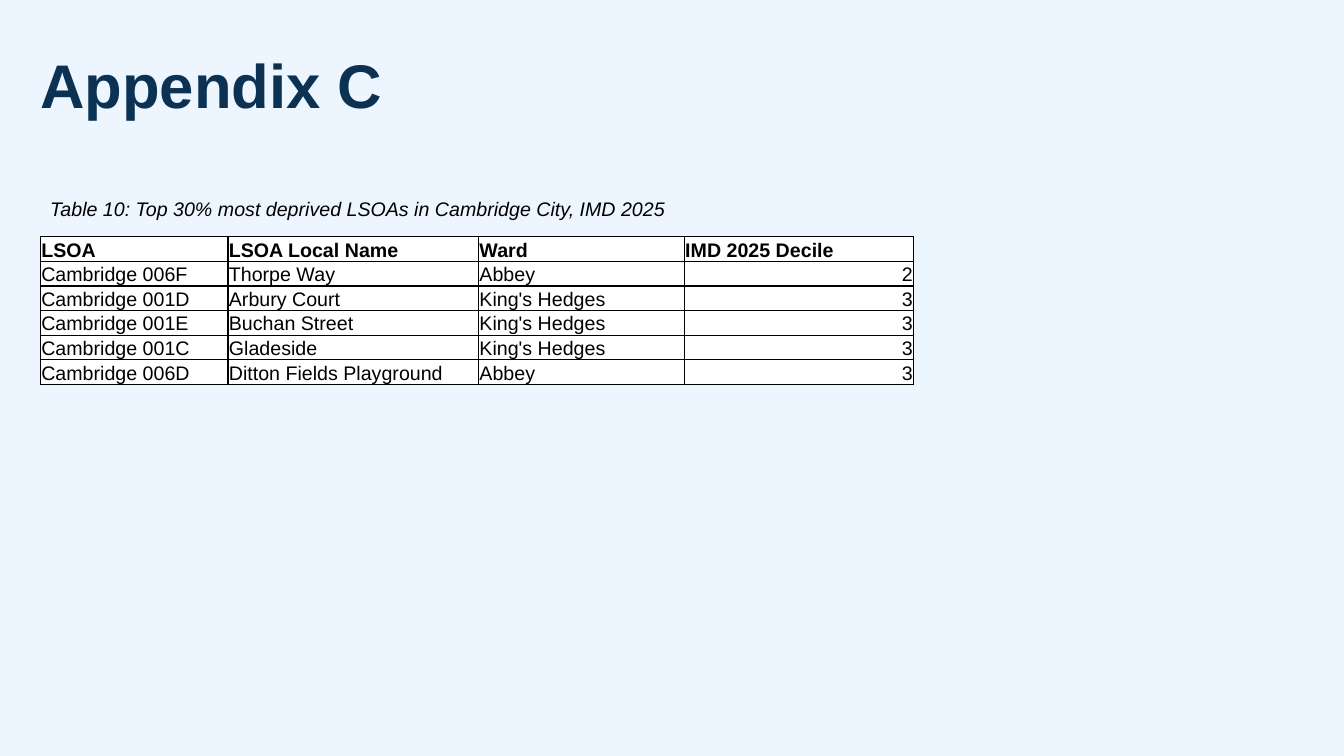
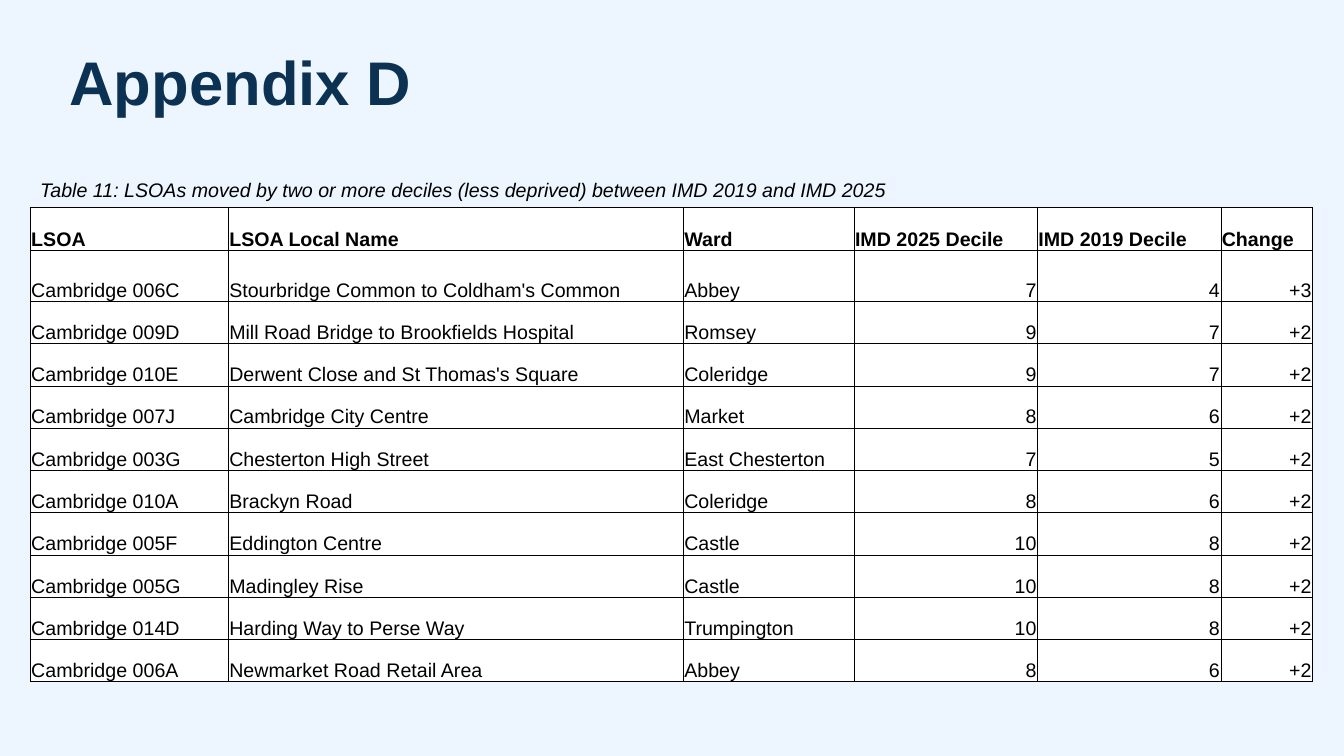
"""Build two appendix slides with tables of deprivation deciles."""
from lxml import etree
from pptx import Presentation
from pptx.dml.color import RGBColor
from pptx.enum import text
from pptx.oxml import ns
from pptx.util import Pt

PALE, NAVY, BLACK, WHITE = "EDF6FF", "0B3153", "000000", "FFFFFF"
FONT = "Arial"


def paint(target, color):
    if hasattr(target, "solid"):
        target.solid()
        target = target.fore_color
    target.rgb = RGBColor.from_string(color)


def write(tf, words, size=14, color=BLACK, bold=False, italic=False,
          align=text.PP_ALIGN.LEFT, spacing=None):
    tf.word_wrap = True
    p = tf.paragraphs[0]
    p.alignment = align
    p.line_spacing = spacing
    r = p.add_run()
    r.text = words
    r.font.name = FONT
    r.font.size = Pt(size)
    r.font.bold = bold
    r.font.italic = italic
    paint(r.font.color, color)


appendices = [
    {
        "title": "Appendix C",
        "title_box": (28.8, 39.6, 251, 62),
        "caption": "Table 10: Top 30% most deprived LSOAs in Cambridge City, IMD 2025",
        "caption_box": (28.8, 136.8, 538.5, 24.5),
        "table_at": (28.8, 169.2),
        "border": 1,
        "widths": [134, 179, 147, 164],
        "heights": [17.3] * 6,
        "rows": [
            ("LSOA", "LSOA Local Name", "Ward", "IMD 2025 Decile"),
            ("Cambridge 006F", "Thorpe Way", "Abbey", "2"),
            ("Cambridge 001D", "Arbury Court", "King's Hedges", "3"),
            ("Cambridge 001E", "Buchan Street", "King's Hedges", "3"),
            ("Cambridge 001C", "Gladeside", "King's Hedges", "3"),
            ("Cambridge 006D", "Ditton Fields Playground", "Abbey", "3"),
        ],
    },
    {
        "title": "Appendix D",
        "title_box": (49.7, 37.4, 828, 63.4),
        "caption": "Table 11: LSOAs moved by two or more deciles (less deprived) "
                   "between IMD 2019 and IMD 2025",
        "caption_box": (21.6, 123.8, 687.6, 24.5),
        "table_at": (21.6, 148.3),
        "border": 0.5,
        "widths": [141.5, 325, 122, 131, 131, 65.5],
        "heights": [30.5, 36.5] + [30.2] * 9,
        "rows": [
            ("LSOA", "LSOA Local Name", "Ward", "IMD 2025 Decile", "IMD 2019 Decile", "Change"),
            ("Cambridge 006C", "Stourbridge Common to Coldham's Common", "Abbey", "7", "4", "+3"),
            ("Cambridge 009D", "Mill Road Bridge to Brookfields Hospital", "Romsey", "9", "7", "+2"),
            ("Cambridge 010E", "Derwent Close and St Thomas's Square", "Coleridge", "9", "7", "+2"),
            ("Cambridge 007J", "Cambridge City Centre", "Market", "8", "6", "+2"),
            ("Cambridge 003G", "Chesterton High Street", "East Chesterton", "7", "5", "+2"),
            ("Cambridge 010A", "Brackyn Road", "Coleridge", "8", "6", "+2"),
            ("Cambridge 005F", "Eddington Centre", "Castle", "10", "8", "+2"),
            ("Cambridge 005G", "Madingley Rise", "Castle", "10", "8", "+2"),
            ("Cambridge 014D", "Harding Way to Perse Way", "Trumpington", "10", "8", "+2"),
            ("Cambridge 006A", "Newmarket Road Retail Area", "Abbey", "8", "6", "+2"),
        ],
    },
]

prs = Presentation()
prs.slide_width, prs.slide_height = Pt(960), Pt(540)
paint(prs.slide_master.background.fill, PALE)

for appendix in appendices:
    s = prs.slides.add_slide(prs.slide_layouts[6])

    tf = s.shapes.add_textbox(*map(Pt, appendix["title_box"])).text_frame
    tf.margin_left = tf.margin_right = tf.margin_top = tf.margin_bottom = 0
    write(tf, appendix["title"], size=44, color=NAVY, bold=True, spacing=0.9)

    tf = s.shapes.add_textbox(*map(Pt, appendix["caption_box"])).text_frame
    tf.auto_size = text.MSO_AUTO_SIZE.SHAPE_TO_FIT_TEXT
    write(tf, appendix["caption"], italic=True)

    rows, widths, heights = appendix["rows"], appendix["widths"], appendix["heights"]
    left, top = appendix["table_at"]
    table = s.shapes.add_table(len(rows), len(widths), Pt(left), Pt(top),
                               Pt(sum(widths)), Pt(sum(heights))).table
    table.first_row = table.horz_banding = False
    for column, width in zip(table.columns, widths):
        column.width = Pt(width)
    for i, (row, height) in enumerate(zip(rows, heights)):
        table.rows[i].height = Pt(height)
        for j, words in enumerate(row):
            cell = table.cell(i, j)
            cell.margin_left = cell.margin_right = cell.margin_top = Pt(0.72)
            cell.margin_bottom = 0
            cell.vertical_anchor = text.MSO_ANCHOR.BOTTOM
            is_number = i > 0 and j > 2
            write(cell.text_frame, words, bold=i == 0,
                  align=text.PP_ALIGN.RIGHT if is_number else text.PP_ALIGN.LEFT)
            tc_pr = cell._tc.get_or_add_tcPr()
            for side in ("a:lnL", "a:lnR", "a:lnT", "a:lnB"):
                ln = etree.SubElement(tc_pr, ns.qn(side), w=str(Pt(appendix["border"])))
                line_fill = etree.SubElement(ln, ns.qn("a:solidFill"))
                etree.SubElement(line_fill, ns.qn("a:srgbClr"), val=BLACK)
            paint(cell.fill, WHITE)

prs.save("out.pptx")
